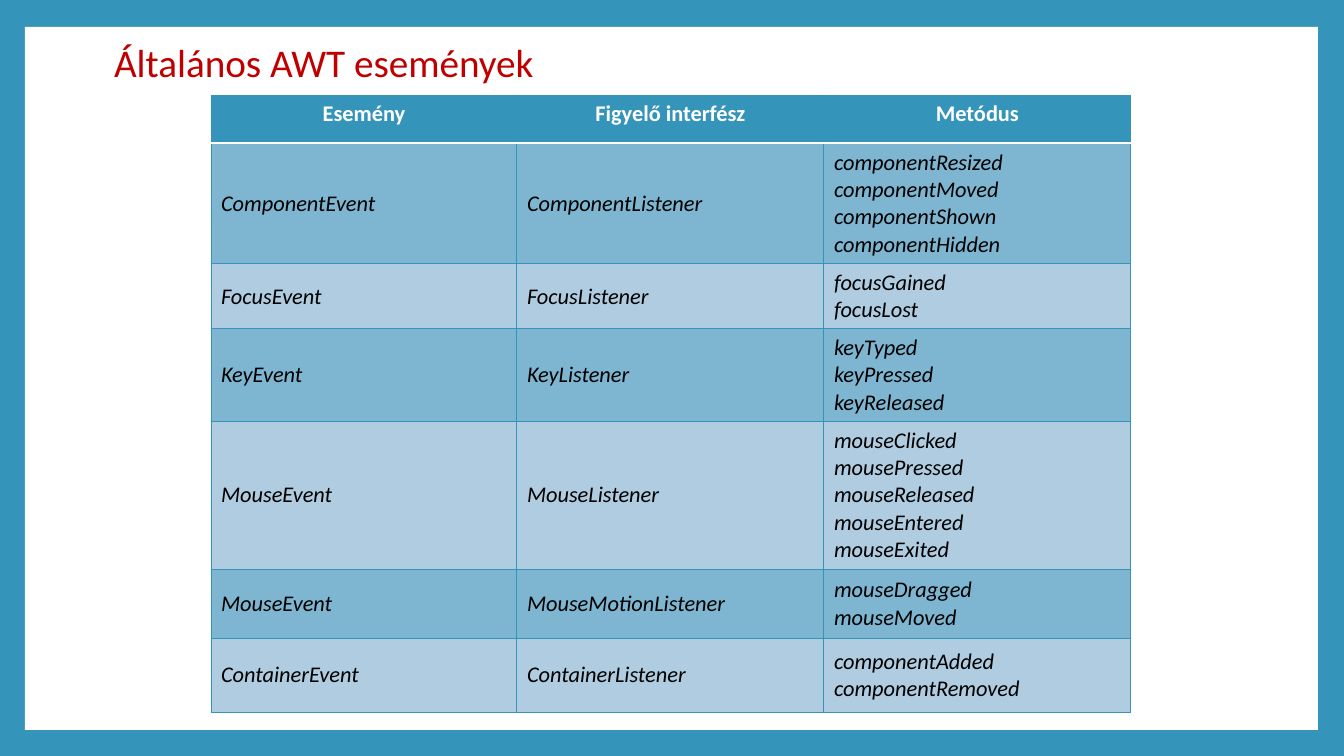
from lxml.etree import SubElement
from pptx import Presentation
from pptx.dml.color import RGBColor
from pptx.enum.shapes import MSO_SHAPE as Shape
from pptx.enum.text import MSO_ANCHOR as Anchor, PP_ALIGN as Align
from pptx.oxml.ns import qn
from pptx.util import Emu, Pt

SCALE = 914400 / 100.8
BLUE, DARK, PALE = "3494BA", "7EB6D1", "AFCCE0"
WHITE, BLACK, RED = "FFFFFF", "000000", "C00000"

HEADS = ["Esemény", "Figyelő interfész", "Metódus"]
EVENTS = [
    ("ComponentEvent", "ComponentListener",
     "componentResized\ncomponentMoved\ncomponentShown\ncomponentHidden"),
    ("FocusEvent", "FocusListener", "focusGained\nfocusLost"),
    ("KeyEvent", "KeyListener", "keyTyped\nkeyPressed\nkeyReleased"),
    ("MouseEvent", "MouseListener",
     "mouseClicked\nmousePressed\nmouseReleased\nmouseEntered\nmouseExited"),
    ("MouseEvent", "MouseMotionListener", "mouseDragged\nmouseMoved"),
    ("ContainerEvent", "ContainerListener",
     "componentAdded\ncomponentRemoved"),
]
WIDTHS = [306, 307, 307]
HEIGHTS = [48, 121, 65, 92, 148, 69, 74]


def px(n):
    return Emu(round(n * SCALE))


def color(code):
    return RGBColor.from_string(code)


def paint(fill, code):
    fill.solid()
    fill.fore_color.rgb = color(code)


def write(frame, text, size=16, ink=BLACK, bold=False, italic=False,
          align=Align.LEFT, space=1.0):
    frame.text = text
    for par in frame.paragraphs:
        par.alignment = align
        par.line_spacing = space
        for run in par.runs:
            font = run.font
            font.name, font.size = "Calibri", Pt(size)
            font.bold, font.italic = bold, italic
            font.color.rgb = color(ink)


def border(cell, **sides):
    """Draw the sides L, R, T and B, each given as (colour, points)."""
    props = cell._tc.get_or_add_tcPr()
    for at, side in enumerate("LRTB"):
        code, width = sides.get(side, (BLUE, 0.79))
        line = SubElement(props, qn(f"a:ln{side}"), w=str(Pt(width)))
        fill = SubElement(line, qn("a:solidFill"))
        SubElement(fill, qn("a:srgbClr"), val=code)
        props.insert(at, line)


def add_panel(slide, x, y, w, h):
    panel = slide.shapes.add_shape(Shape.RECTANGLE, px(x), px(y), px(w), px(h))
    panel.shadow.inherit = False
    paint(panel.fill, WHITE)
    panel.line.fill.background()
    return panel


def set_title(slide, text, x, y, w, h):
    title = slide.shapes.title
    title.left, title.top, title.width, title.height = map(px, (x, y, w, h))
    title.text_frame.vertical_anchor = Anchor.MIDDLE
    write(title.text_frame, text, size=28, ink=RED, space=0.9)
    return title


def add_grid(slide, x, y):
    frame = slide.shapes.add_table(len(HEIGHTS), len(WIDTHS), px(x), px(y),
                                   px(sum(WIDTHS)), px(sum(HEIGHTS)))
    table = frame.table
    for col, width in zip(table.columns, WIDTHS):
        col.width = px(width)
    for row, height in zip(table.rows, HEIGHTS):
        row.height = px(height)

    # Header row, with a white rule below it
    rule = (WHITE, 1.5)
    for cell, text in zip(table.rows[0].cells, HEADS):
        write(cell.text_frame, text, ink=WHITE, bold=True, align=Align.CENTER)
        paint(cell.fill, BLUE)
        border(cell, B=rule)

    # Event rows in alternating bands
    for i, event in enumerate(EVENTS):
        for cell, text in zip(table.rows[i + 1].cells, event):
            write(cell.text_frame, text, italic=True)
            cell.vertical_anchor = Anchor.MIDDLE
            paint(cell.fill, PALE if i % 2 else DARK)
            border(cell, **({} if i else {"T": rule}))


def main():
    deck = Presentation()
    deck.slide_width, deck.slide_height = px(1344), px(756)
    slide = deck.slides.add_slide(deck.slide_layouts[5])

    # Blue frame around a white panel, which lies behind the title
    paint(slide.background.fill, BLUE)
    panel = add_panel(slide, 25, 27, 1293, 703)
    title = set_title(slide, "Általános AWT események", 104, 35, 1089, 60)
    title.element.addprevious(panel.element)

    add_grid(slide, 211, 95)
    deck.save("out.pptx")


if __name__ == "__main__":
    main()
